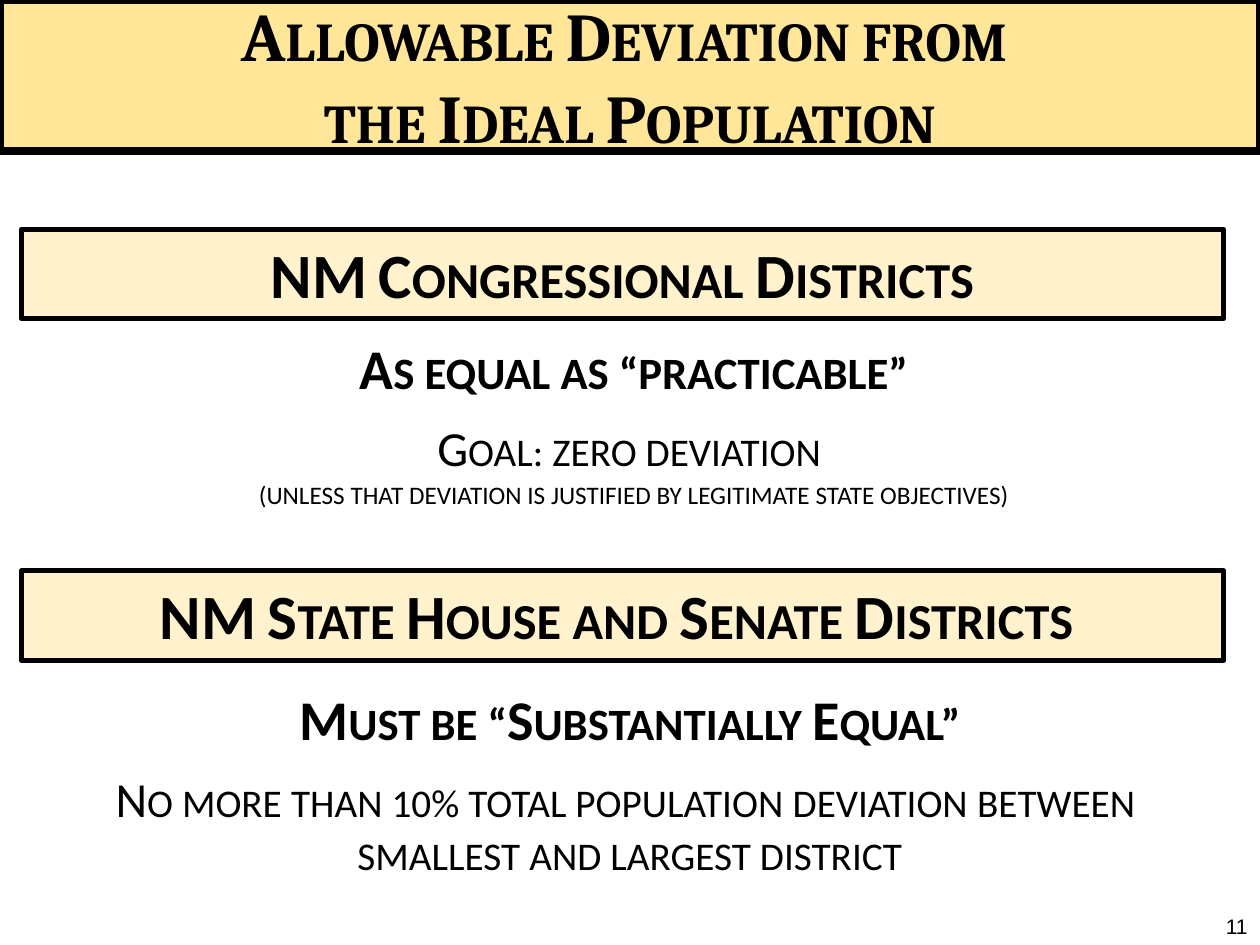
from pptx import Presentation
from pptx.dml.color import RGBColor
from pptx.enum.shapes import MSO_SHAPE as Shape
from pptx.enum.text import MSO_ANCHOR as Anchor, PP_ALIGN as Align
from pptx.util import Inches, Pt

HUES = {"ink": "000000", "gold": "FFE699", "cream": "FFF2CC"}
WIDE, HIGH = 10, 7.5


def hue(name):
    return RGBColor.from_string(HUES[name])


class Page:
    """Holds the slide and its style; boxes are (left, top, width, height) in inches."""

    def __init__(self, deck):
        self.slide = deck.slides.add_slide(deck.slide_layouts[6])

    def label(self, shape, lines, anchor=Anchor.TOP, align=Align.CENTER, caps=True):
        """Each line is (text, format values, paragraph format values)."""
        frame = shape.text_frame
        frame.word_wrap = True
        frame.vertical_anchor = anchor
        for i, (text, look, gaps) in enumerate(lines):
            para = frame.add_paragraph() if i else frame.paragraphs[0]
            for key, value in {"alignment": align, **gaps}.items():
                setattr(para, key, value)
            run = para.add_run()
            run.text = text
            for key, value in {"name": "Calibri", "bold": False, **look}.items():
                setattr(run.font, key, value)
            run.font.color.rgb = hue("ink")
            if caps:
                run._r.get_or_add_rPr().set("cap", "small")

    def band(self, box, fill, edge, lines, anchor=Anchor.TOP):
        shape = self.slide.shapes.add_shape(Shape.RECTANGLE, *map(Inches, box))
        shape.shadow.inherit = False
        shape.fill.solid()
        shape.fill.fore_color.rgb = hue(fill)
        shape.line.color.rgb = hue("ink")
        shape.line.width = Pt(edge)
        self.label(shape, lines, anchor)

    def note(self, box, lines, **style):
        self.label(self.slide.shapes.add_textbox(*map(Inches, box)), lines, **style)

    def head(self, top, text):
        look = {"size": Pt(36), "bold": True}
        self.band((0.17, top, 9.54, 0.71), "cream", 3, [(text, look, {})])

    def rule(self, box, lead, *rest):
        """A bold statement, then its details after a small gap."""
        tight = {"line_spacing": 0.9}
        lines = [(lead, {"size": Pt(32), "bold": True}, tight)]
        for i, (text, size) in enumerate(rest):
            gap = {"space_before": Pt(0 if i else 13)}
            lines.append((text, {"size": Pt(size)}, {**tight, **gap}))
        self.note(box, lines)


def main():
    deck = Presentation()
    deck.slide_width, deck.slide_height = Inches(WIDE), Inches(HIGH)
    page = Page(deck)

    # Title band
    look = {"name": "Cambria", "size": Pt(39), "bold": True}
    title = ("Allowable Deviation from ", "the Ideal Population")
    page.band((0, 0, WIDE, 1.2), "gold", 4.5,
              [(text, look, {}) for text in title], Anchor.MIDDLE)

    # Congressional districts
    page.head(1.82, "NM Congressional Districts")
    page.rule((0.03, 2.66, WIDE, 1.46), "As equal as “practicable”",
              ("Goal: zero deviation ", 28),
              ("(unless that deviation is justified by legitimate state objectives)", 18))

    # State districts
    page.head(4.53, "NM State House and Senate Districts ")
    page.rule((0, 5.44, WIDE, 1.62), "Must be “Substantially Equal”",
              ("No more than 10% total population deviation between ", 28),
              ("smallest and largest district", 28))

    # Page number
    page.note((7.92, 7, 2.08, 0.5), [("11", {"name": "Arial", "size": Pt(12)}, {})],
              anchor=Anchor.BOTTOM, align=Align.RIGHT, caps=False)

    deck.save("out.pptx")


if __name__ == "__main__":
    main()
